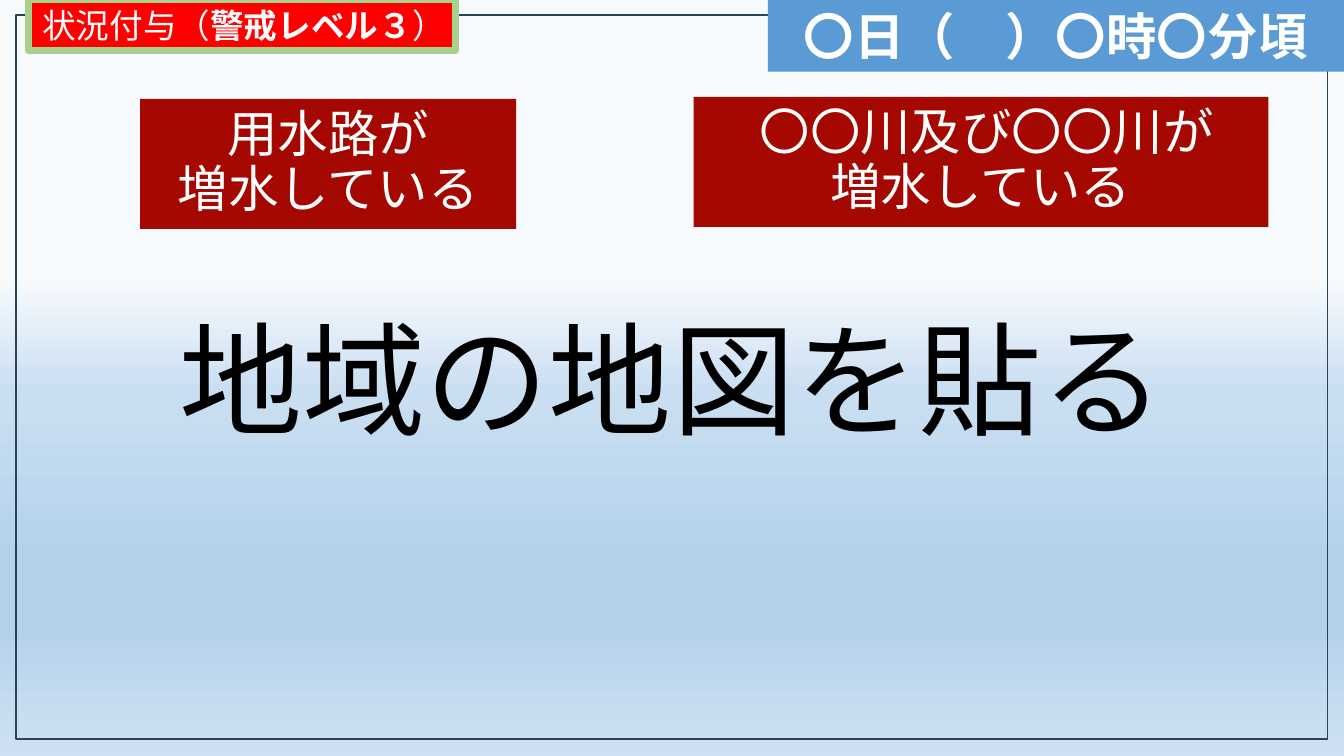
from copy import deepcopy
from dataclasses import dataclass
from typing import Optional

from lxml.etree import SubElement
from pptx import Presentation
from pptx.dml.color import RGBColor
from pptx.enum.shapes import MSO_SHAPE
from pptx.enum.text import MSO_ANCHOR, MSO_AUTO_SIZE, PP_ALIGN
from pptx.oxml.ns import qn
from pptx.shapes.autoshape import Shape
from pptx.slide import Slide
from pptx.util import Inches, Pt

FONT = "Noto Sans CJK JP"
BLACK = RGBColor(0x00, 0x00, 0x00)
WHITE = RGBColor(0xFF, 0xFF, 0xFF)
NAVY = RGBColor(0x28, 0x44, 0x5D)
DARK_RED = RGBColor(0xA4, 0x08, 0x00)
RED = RGBColor(0xFF, 0x00, 0x00)
BLUE = RGBColor(0x5B, 0x9B, 0xD5)
GREEN = RGBColor(0xA9, 0xD1, 0x8E)
SKY = [
    (0.37, RGBColor(0xF7, 0xFA, 0xFD)),
    (0.52, RGBColor(0xC9, 0xDE, 0xF1)),
    (0.74, RGBColor(0xB5, 0xD2, 0xEC)),
    (0.83, RGBColor(0xB5, 0xD2, 0xEC)),
    (1.0, RGBColor(0xCE, 0xE1, 0xF2)),
]

WIDTH, HEIGHT = Inches(13.33), Inches(7.5)
COL, ROW = WIDTH / 100, HEIGHT / 100

Run = tuple[str, Optional[bool]]


@dataclass(frozen=True)
class Panel:
    left: float
    top: float
    width: float
    height: float
    lines: list[list[Run]]
    size: int
    color: RGBColor = WHITE
    fill: Optional[RGBColor] = None
    line: Optional[RGBColor] = None
    line_width: float = 1
    align: PP_ALIGN = PP_ALIGN.CENTER
    spacing: float = 1.0
    bold: bool = False
    wrap: bool = True
    margin: float = 0


def warning(left: float, top: float, width: float, place: str) -> Panel:
    return Panel(left, top, width, 17.2, [[(place, None)], [("増水している", None)]],
                 36, fill=DARK_RED, spacing=0.9)


TITLE = Panel(2.1, 0, 31.81, 6.67,
              [[("状況付与（", None), ("警戒レベル３", True), ("）", None)]], 24,
              fill=RED, line=GREEN, line_width=5, align=PP_ALIGN.RIGHT,
              wrap=False, margin=0.1)
FRAME = Panel(1.2, 2, 97.6, 95.73, [[("地域の地図を貼る", None)]], 88,
              color=BLACK, line=NAVY)
RIVERS = warning(51.61, 12.8, 42.76, " 〇〇川及び〇〇川が")
DATE = Panel(57.14, 0, 42.86, 9.47, [[("〇日（\u3000）〇時〇分頃".replace("\u3000", "　"), None)]],
             36, fill=BLUE, bold=True, margin=0.1)
CANAL = warning(10.43, 13.07, 27.98, "用水路が")


def format_panel(sp: Shape, panel: Panel) -> None:
    sp.left, sp.top = round(panel.left * COL), round(panel.top * ROW)
    sp.width, sp.height = round(panel.width * COL), round(panel.height * ROW)
    if panel.fill is None:
        sp.fill.background()
    else:
        sp.fill.solid()
        sp.fill.fore_color.rgb = panel.fill
    if panel.line is None:
        sp.line.fill.background()
    else:
        sp.line.color.rgb = panel.line
        sp.line.width = Pt(panel.line_width)
    write_lines(sp, panel)


def write_lines(sp: Shape, panel: Panel) -> None:
    tf = sp.text_frame
    tf.word_wrap = panel.wrap
    tf.auto_size = MSO_AUTO_SIZE.NONE
    tf.vertical_anchor = MSO_ANCHOR.MIDDLE
    tf.margin_left = tf.margin_right = Inches(panel.margin)
    tf.margin_top = tf.margin_bottom = 0
    for i, runs in enumerate(panel.lines):
        p = tf.paragraphs[0] if i == 0 else tf.add_paragraph()
        p.alignment = panel.align
        p.line_spacing = panel.spacing
        p.font.size = Pt(panel.size)
        p.font.bold = panel.bold
        p.font.color.rgb = panel.color
        p.font.name = FONT
        SubElement(p.font._element, qn("a:ea")).set("typeface", FONT)
        for text, bold in runs:
            r = p.add_run()
            r.text = text
            r.font.bold = bold


def add_panel(s: Slide, panel: Panel) -> None:
    sp = s.shapes.add_shape(MSO_SHAPE.RECTANGLE, 0, 0, 0, 0)
    sp.shadow.inherit = False
    format_panel(sp, panel)


def paint_sky(s: Slide) -> None:
    fill = s.background.fill
    fill.gradient()
    fill.gradient_angle = 270
    stops = s._element.xpath(".//a:gsLst")[0]
    for _ in range(len(SKY) - len(stops)):
        stops.append(deepcopy(stops[0]))
    for stop, (position, color) in zip(fill.gradient_stops, SKY):
        stop.position = position
        stop.color.rgb = color


def main() -> None:
    prs = Presentation()
    prs.slide_width, prs.slide_height = WIDTH, HEIGHT
    s = prs.slides.add_slide(prs.slide_layouts[5])
    paint_sky(s)
    for panel in (FRAME, RIVERS, DATE):
        add_panel(s, panel)
    title = s.shapes.title
    format_panel(title, TITLE)
    s.shapes._spTree.append(title._element)
    add_panel(s, CANAL)
    prs.save("out.pptx")


if __name__ == "__main__":
    main()
